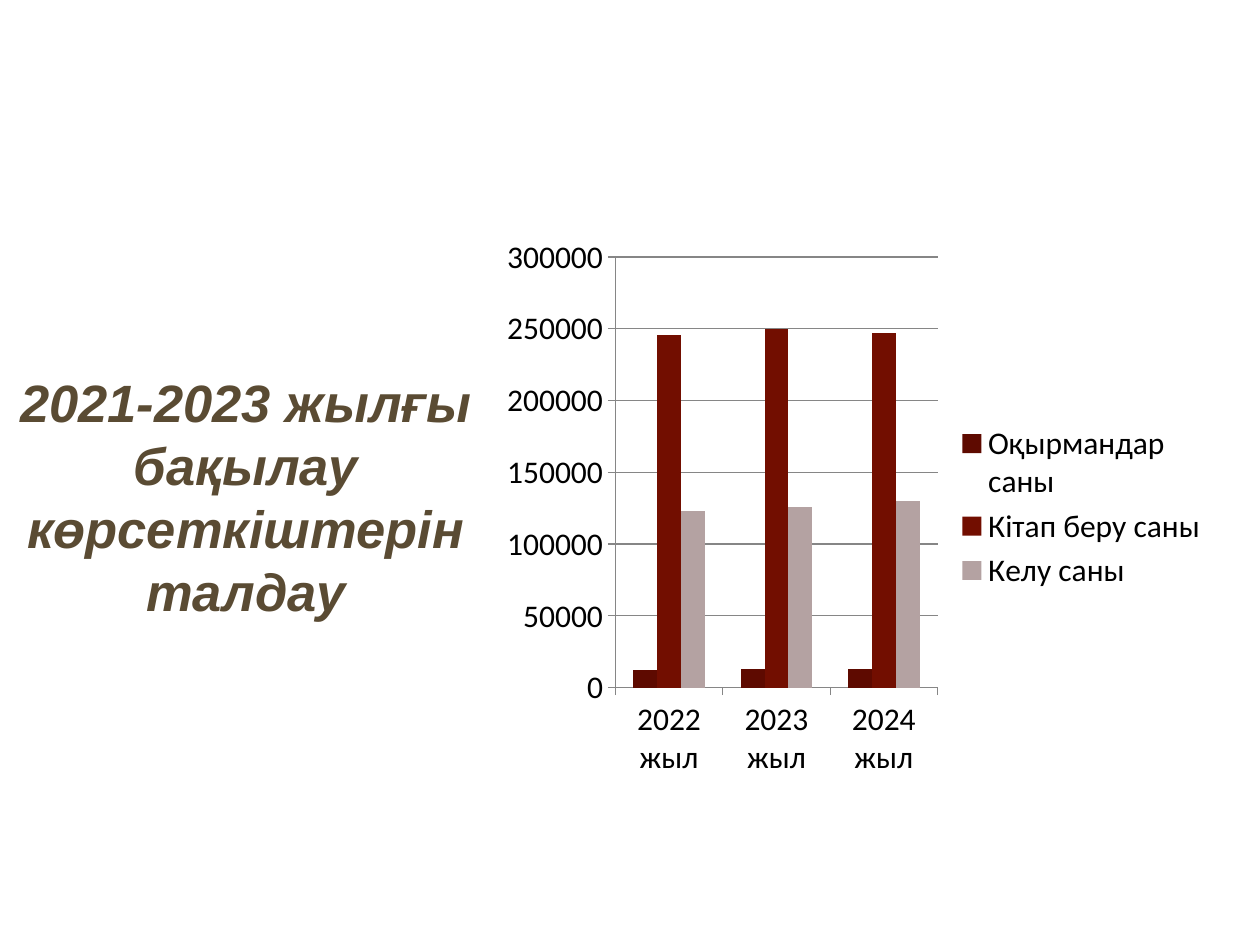
from pptx import Presentation
from pptx.chart.data import CategoryChartData
from pptx.dml.color import RGBColor
from pptx.enum.chart import XL_CHART_TYPE, XL_LEGEND_POSITION, XL_TICK_MARK
from pptx.enum.text import MSO_AUTO_SIZE, PP_ALIGN
from pptx.util import Inches, Pt

YEARS = ["2022 жыл", "2023 жыл", "2024 жыл"]
SERIES = [
    ("Оқырмандар саны", [12000, 13000, 13000], "5E0A00"),
    ("Кітап беру саны", [246000, 250000, 247000], "720E00"),
    ("Келу саны", [123000, 126000, 130000], "B4A2A2"),
]


def color(code):
    return RGBColor.from_string(code)


def style(font, name, size, tone, bold=False, italic=False):
    font.name, font.size = name, Pt(size)
    font.bold, font.italic = bold, italic
    font.color.rgb = color(tone)


def add_text(slide, box, text, align=PP_ALIGN.LEFT, **look):
    frame = slide.shapes.add_textbox(*map(Inches, box)).text_frame
    frame.word_wrap = True
    frame.auto_size = MSO_AUTO_SIZE.SHAPE_TO_FIT_TEXT
    para = frame.paragraphs[0]
    para.alignment = align
    run = para.add_run()
    run.text = text
    style(run.font, **look)


def add_title(slide, box):
    add_text(slide, box, "2021-2023 жылғы бақылау көрсеткіштерін талдау",
             align=PP_ALIGN.CENTER, name="Arial", size=30, tone="5A4B33",
             bold=True, italic=True)


def add_bars(slide, box):
    data = CategoryChartData()
    data.categories = YEARS
    for name, vals, _ in SERIES:
        data.add_series(name, vals)
    chart = slide.shapes.add_chart(
        XL_CHART_TYPE.COLUMN_CLUSTERED, *map(Inches, box), data).chart
    style(chart.font, "Calibri", 18, "000000")
    chart.has_title = False
    chart.has_legend = True
    chart.legend.position = XL_LEGEND_POSITION.RIGHT
    chart.legend.include_in_layout = False

    plot = chart.plots[0]
    plot.gap_width, plot.overlap = 150, 0
    plot.vary_by_categories = False
    for bar, (_, _, tone) in zip(plot.series, SERIES):
        bar.format.fill.solid()
        bar.format.fill.fore_color.rgb = color(tone)

    rows = chart.value_axis
    rows.minimum_scale, rows.maximum_scale = 0, 300000
    rows.major_unit = 50000
    rows.has_major_gridlines = True
    lines = [rows.major_gridlines.format.line]
    for axis in (rows, chart.category_axis):
        axis.major_tick_mark = XL_TICK_MARK.OUTSIDE
        axis.minor_tick_mark = XL_TICK_MARK.NONE
        lines.append(axis.format.line)
    for line in lines:
        line.color.rgb = color("868686")
        line.width = Pt(0.75)


def main():
    deck = Presentation()
    deck.slide_width, deck.slide_height = Inches(10), Inches(7.5)
    slide = deck.slides.add_slide(deck.slide_layouts[6])
    add_title(slide, (-0.16, 2.89, 4.22, 2.12))
    add_bars(slide, (3.91, 1.8, 5.78, 4.45))
    deck.save("out.pptx")


if __name__ == "__main__":
    main()
